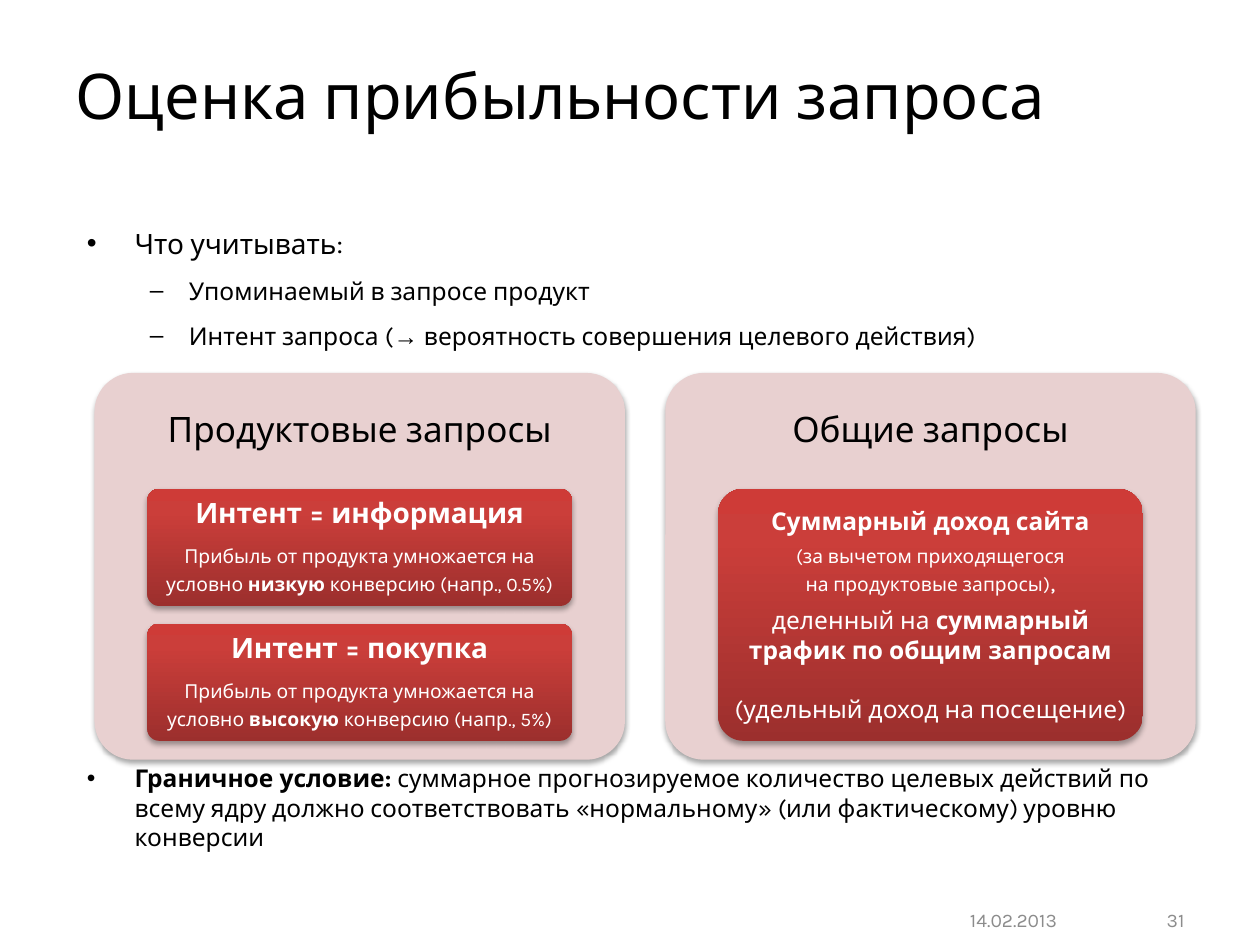
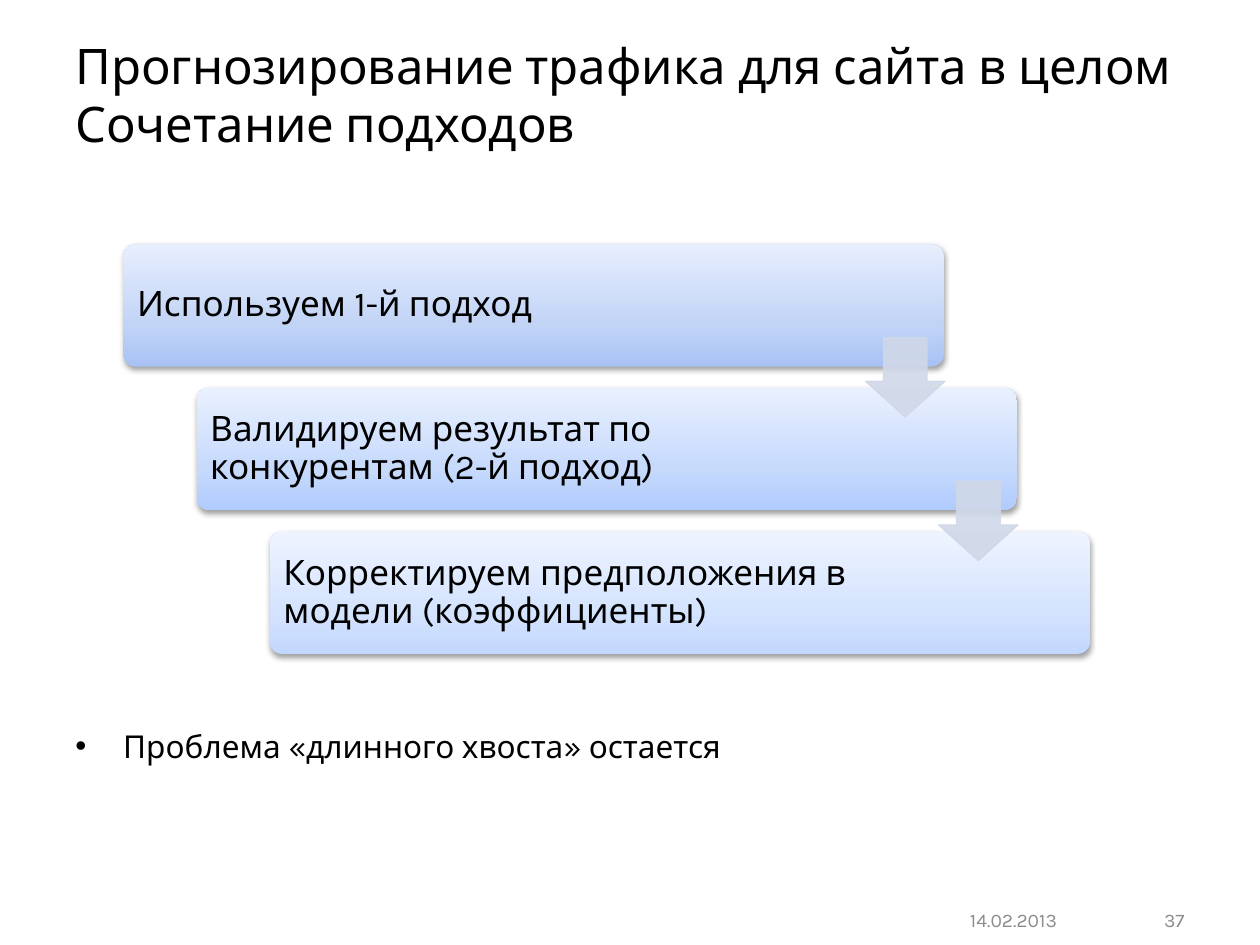
import pptx
import pptx.util
import pptx.dml.color
import pptx.enum.shapes
import pptx.enum.text
import pptx.oxml
import pptx.oxml.ns

Inches = pptx.util.Inches
Pt = pptx.util.Pt
SHAPE = pptx.enum.shapes.MSO_SHAPE
ALIGN = pptx.enum.text.PP_ALIGN
ANCHOR = pptx.enum.text.MSO_ANCHOR
NS = pptx.oxml.ns.nsdecls("a")

FONT, SYMBOL_FONT = "Karla", "Arial"
BLACK, WHITE, GREY = "000000", "FFFFFF", "8C8C8C"
PANEL, ARROW = "E8D0D0", "D0D8E8"
RED = [(0, "9C2F2D"), (80, "CB3E3A"), (100, "CE3B37")]
BLUES = [
    [(0, "A8C2F4"), (35, "C2D4F6"), (100, "E7EEFD")],
    [(0, "B0CBFD"), (35, "C7DAFC"), (100, "E9F0FF")],
    [(0, "C3D8FE"), (35, "D4E3FE"), (100, "EEF4FF")],
]


def rgb(value):
    """Turn a hex string into a colour."""
    return pptx.dml.color.RGBColor.from_string(value)


def xml(text):
    """Parse a fragment of DrawingML."""
    return pptx.oxml.parse_xml(text)


def add_runs(p, text, size, color=BLACK, font=FONT):
    """Add text to a paragraph; *stars* mark bold and newlines break lines."""
    for i, part in enumerate(text.split("*")):
        for j, line in enumerate(part.split("\n")):
            if j:
                p.add_line_break()
            if line:
                r = p.add_run()
                r.text = line
                r.font.name, r.font.size = font, Pt(size)
                r.font.bold = i % 2 == 1
                r.font.color.rgb = rgb(color)
                if font != FONT:
                    for script in ("ea", "cs"):
                        r._r.get_or_add_rPr().append(
                            xml(f'<a:{script} {NS} typeface="{font}"/>'))


def write(tf, text, size, color=BLACK, align=ALIGN.LEFT, line=1.0, before=0, after=0,
          bullet=None, indent=(0, 0)):
    """Write one formatted paragraph into a text frame and return it."""
    p = tf.paragraphs[0] if not tf.text else tf.add_paragraph()
    p.alignment, p.line_spacing = align, line
    p.space_before, p.space_after = Pt(before), Pt(after)
    if bullet:
        pPr = p._p.get_or_add_pPr()
        pPr.set("marL", str(Inches(indent[0])))
        pPr.set("indent", str(Inches(indent[1])))
        pPr.append(xml(f'<a:buFont {NS} typeface="Arial"/>'))
        pPr.append(xml(f'<a:buChar {NS} char="{bullet}"/>'))
    add_runs(p, text, size, color)
    return p


def frame(sp, anchor, insets):
    """Prepare the text frame of a shape and return it."""
    tf = sp.text_frame
    tf.word_wrap = True
    tf.auto_size = pptx.enum.text.MSO_AUTO_SIZE.NONE
    tf.vertical_anchor = anchor
    tf.margin_left, tf.margin_top, tf.margin_right, tf.margin_bottom = map(Inches, insets)
    return tf


def text_box(slide, box, anchor=ANCHOR.TOP):
    """Add a text box and return its text frame."""
    sp = slide.shapes.add_textbox(*map(Inches, box))
    return frame(sp, anchor, (0.1, 0.05, 0.1, 0.05))


def bullet(tf, text, size, level=0, **fmt):
    """Write a bulleted paragraph of the given level and return it."""
    mark, indent = [("•", (0.38, -0.38)), ("–", (0.81, -0.31))][level]
    return write(tf, text, size, after=6, bullet=mark, indent=indent, **fmt)


def round_box(slide, box, fill, insets, shade=35):
    """Add a shadowed rounded box with a plain or gradient fill; return its frame."""
    sp = slide.shapes.add_shape(SHAPE.ROUNDED_RECTANGLE, *map(Inches, box))
    sp.adjustments[0] = 0.1
    sp.line.fill.background()
    if isinstance(fill, str):
        sp.fill.solid()
        sp.fill.fore_color.rgb = rgb(fill)
    else:
        stops = "".join(f'<a:gs pos="{pos * 1000}"><a:srgbClr val="{color}"/></a:gs>'
                        for pos, color in fill)
        sp._element.spPr.find(pptx.oxml.ns.qn("a:prstGeom")).addnext(
            xml(f'<a:gradFill {NS} rotWithShape="1"><a:gsLst>{stops}</a:gsLst>'
                '<a:lin ang="16200000" scaled="0"/></a:gradFill>'))
    sp._element.spPr.append(xml(
        f'<a:effectLst {NS}><a:outerShdw blurRad="{Pt(3.1)}" dist="{Pt(1.7)}" dir="5400000" '
        f'rotWithShape="0"><a:srgbClr val="000000"><a:alpha val="{shade * 1000}"/>'
        '</a:srgbClr></a:outerShdw></a:effectLst>'))
    return frame(sp, ANCHOR.MIDDLE, insets)


def base_slide(prs, title, size, number):
    """Add a slide with its title, date and number."""
    slide = prs.slides.add_slide(prs.slide_layouts[5])
    sp = slide.shapes.title
    sp.left, sp.top, sp.width, sp.height = map(Inches, (0.5, 0.12, 9.38, 1.25))
    write(frame(sp, ANCHOR.MIDDLE, (0.1, 0.05, 0.1, 0.05)), title, size)
    write(text_box(slide, (7.6, 7.1, 1.1, 0.4), ANCHOR.MIDDLE), "14.02.2013", 11, GREY)
    write(text_box(slide, (8.7, 7.1, 0.8, 0.4), ANCHOR.MIDDLE), number, 11, GREY,
          align=ALIGN.RIGHT)
    return slide


def query_panel(slide, x, y, heading):
    """Add a pale panel with a heading at its top."""
    tf = round_box(slide, (x, y, 4.21, 3.07), PANEL, (0, 0, 0, 2.14))
    write(tf, heading, 20, align=ALIGN.CENTER, line=0.9)


def red_card(slide, x, y, height):
    """Add a red card and return its text frame."""
    return round_box(slide, (x, y, 3.37, height), RED, (0.04, 0.03, 0.04, 0.03))


def product_panel(slide, x, y):
    """Build the panel of product queries with one card per intent."""
    query_panel(slide, x, y, "Продуктовые запросы")
    cards = [("информация", "*низкую* конверсию (напр., 0.5%)"),
             ("покупка", "*высокую* конверсию (напр., 5%)")]
    for i, (intent, rate) in enumerate(cards):
        tf = red_card(slide, x + 0.42, y + 0.92 + i * 1.07, 0.93)
        write(tf, f"*Интент = {intent}*", 16, WHITE, ALIGN.CENTER, line=0.9, after=5.6)
        write(tf, f"Прибыль от продукта умножается на\nусловно {rate}", 11, WHITE,
              ALIGN.CENTER, line=1.2, after=3.9)


def general_panel(slide, x, y):
    """Build the panel of general queries with its single card."""
    query_panel(slide, x, y, "Общие запросы")
    tf = red_card(slide, x + 0.42, y + 0.92, 2)
    fmt = dict(color=WHITE, align=ALIGN.CENTER, after=4.9)
    write(tf, "*Суммарный доход сайта*", 14, **fmt)
    p = write(tf, "(за вычетом приходящегося\nна продуктовые запросы)", 11, **fmt)
    add_runs(p, ",", 14, WHITE)
    write(tf, "деленный на *суммарный трафик по общим запросам*", 14, **fmt)
    write(tf, "(удельный доход на посещение)", 14, before=12, **fmt)


def step_stairs(slide, x, y, steps):
    """Build descending steps joined by down arrows."""
    dx, dy = 0.58, 1.14
    for i, (text, fill) in enumerate(zip(steps, BLUES)):
        tf = round_box(slide, (x + i * dx, y + i * dy, 6.51, 0.97), fill,
                       (0.08, 0.08, 1.28, 0.08), shade=38)
        write(tf, text, 20, line=0.9)
    for i in range(len(steps) - 1):
        down_arrow(slide, x + 5.89 + i * dx, y + 0.74 + i * dy)


def down_arrow(slide, x, y):
    """Add a slightly transparent down arrow."""
    sp = slide.shapes.add_shape(SHAPE.DOWN_ARROW, *map(Inches, (x, y, 0.63, 0.63)))
    sp.adjustments[0], sp.adjustments[1] = 0.55, 0.45
    sp.shadow.inherit = False
    sp.fill.solid()
    sp.fill.fore_color.rgb = rgb(ARROW)
    sp.line.color.rgb = rgb(ARROW)
    sp.line.width = Pt(0.75)
    for color in sp._element.spPr.iter(pptx.oxml.ns.qn("a:srgbClr")):
        color.append(xml(f'<a:alpha {NS} val="90000"/>'))


def profit_slide(prs):
    """Build the slide on query profitability."""
    slide = base_slide(prs, "Оценка прибыльности запроса", 36, "31")
    tf = text_box(slide, (0.59, 1.75, 8.91, 1.2))
    bullet(tf, "Что учитывать:", 16)
    bullet(tf, "Упоминаемый в запросе продукт", 14, level=1, before=2.8)
    p = bullet(tf, "Интент запроса (", 14, level=1, before=2.8)
    add_runs(p, "→", 14, font=SYMBOL_FONT)
    add_runs(p, " вероятность совершения целевого действия)", 14)
    product_panel(slide, 0.75, 2.96)
    general_panel(slide, 5.28, 2.96)
    tf = text_box(slide, (0.59, 6.01, 8.91, 0.9))
    bullet(tf, "*Граничное условие:* суммарное прогнозируемое количество целевых действий по "
               "всему ядру должно соответствовать «нормальному» (или фактическому) уровню "
               "конверсии", 14)


def forecast_slide(prs):
    """Build the slide on combined traffic forecasting."""
    slide = base_slide(prs, "Прогнозирование трафика для сайта в целом\nСочетание подходов",
                       28, "37")
    step_stairs(slide, 0.98, 1.94, [
        "Используем 1-й подход",
        "Валидируем результат по конкурентам (2-й подход)",
        "Корректируем предположения в модели (коэффициенты)",
    ])
    bullet(text_box(slide, (0.5, 5.72, 9, 1.42)), "Проблема «длинного хвоста» остается", 18)


def main():
    """Build and save the presentation."""
    prs = pptx.Presentation()
    prs.slide_width, prs.slide_height = Inches(10), Inches(7.5)
    profit_slide(prs)
    forecast_slide(prs)
    prs.save("out.pptx")


if __name__ == "__main__":
    main()
